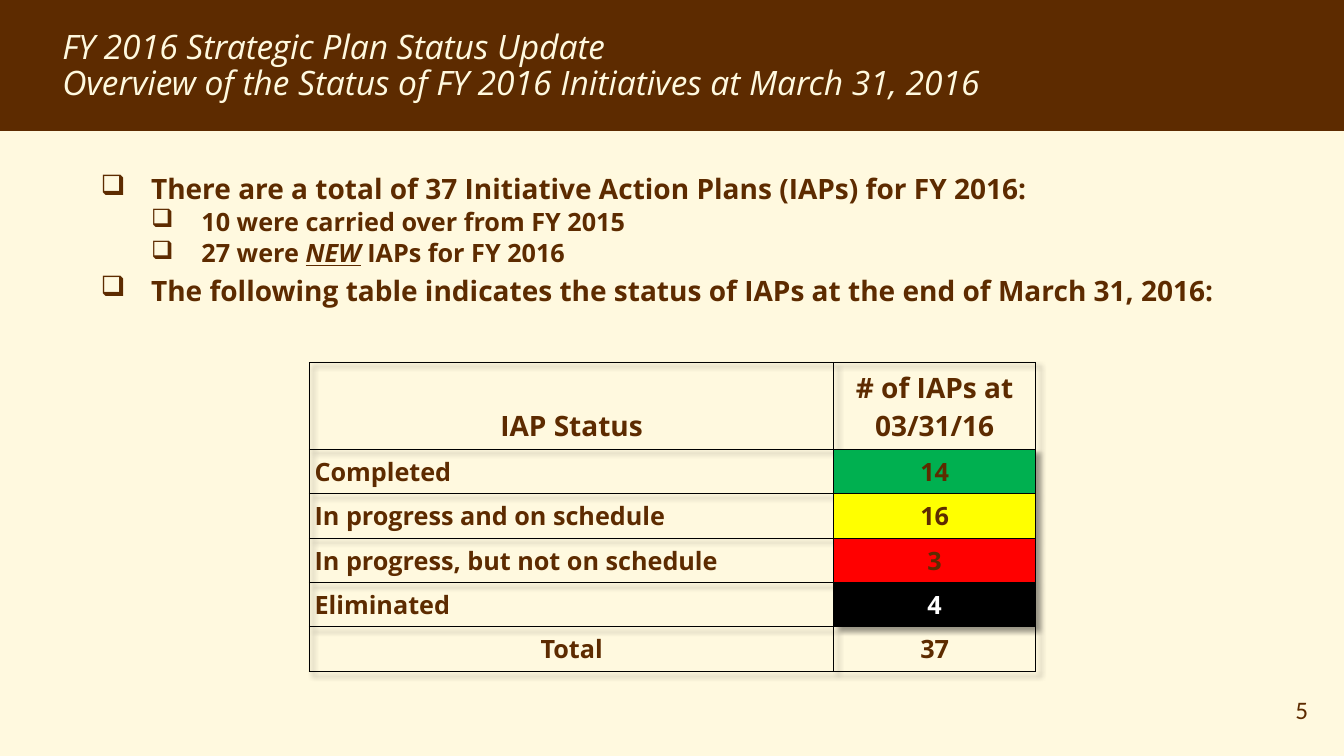
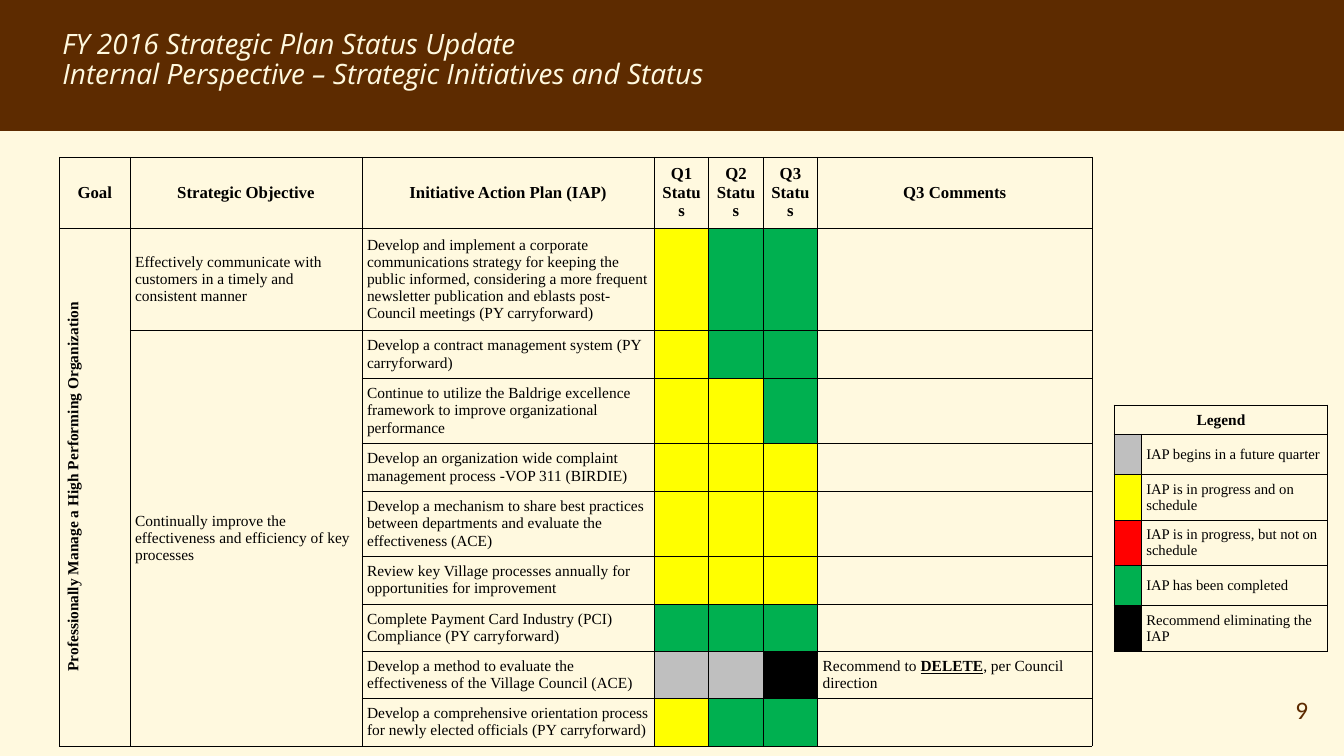
from lxml import etree
from pptx import Presentation, util as u
from pptx.dml import color
from pptx.enum import shapes, text
from pptx.oxml import ns

BROWN, CREAM, INK, WHITE = "5D2B00", "FFF9DF", "000000", "FFFFFF"
GREEN, YELLOW, RED, GREY = "00B050", "FFFF00", "FF0000", "BFBFBF"
STATUS = {"G": GREEN, "Y": YELLOW, "R": RED, "N": GREY, "B": INK}
SANS = {"name": "Open Sans", "color": BROWN}
SERIF = {"name": "Times New Roman", "color": INK, "size": 11}
LEFT, CENTER = text.PP_ALIGN.LEFT, text.PP_ALIGN.CENTER
MIDDLE, BOTTOM = text.MSO_ANCHOR.MIDDLE, text.MSO_ANCHOR.BOTTOM
COLUMNS, ROWS = 133.3, 75


def rgb(value):
    return color.RGBColor.from_string(value)


def grid(count):
    """Length of a number of grid columns or rows, ten to the inch."""
    return u.Inches(count / 10)


def add_xml(parent, tag, **attributes):
    return etree.SubElement(parent, ns.qn(tag), attributes)


def set_font(font, style):
    for key, value in style.items():
        if key == "color":
            font.color.rgb = rgb(value)
        else:
            setattr(font, key, u.Pt(value) if key == "size" else value)


def write(para, parts, style):
    """Fill a paragraph from a string, or from (string, extra style) pairs."""
    for words, extra in [(parts, {})] if isinstance(parts, str) else parts:
        span = para.add_run()
        span.text = words
        set_font(span.font, {**style, **extra})


def add_borders(cell, points):
    properties = cell._tc.get_or_add_tcPr()
    for side in ("a:lnL", "a:lnR", "a:lnT", "a:lnB"):
        line = add_xml(properties, side, w=str(u.Pt(points)))
        add_xml(add_xml(line, "a:solidFill"), "a:srgbClr", val=INK)


def add_shadow(table):
    effects = etree.Element(ns.qn("a:effectLst"))
    shadow = add_xml(effects, "a:outerShdw", blurRad="50800", dist="50800",
                     dir="2700000", algn="tl", rotWithShape="0")
    add_xml(add_xml(shadow, "a:srgbClr", val=INK), "a:alpha", val="40000")
    table._tbl.tblPr.insert(0, effects)


def label(words, **options):
    return {"text": words, **options}


def swatch(key):
    return {"fill": STATUS[key]}


class Report:
    def __init__(self):
        self.deck = Presentation()
        self.deck.slide_width, self.deck.slide_height = grid(COLUMNS), grid(ROWS)
        fill = self.deck.slide_master.background.fill
        fill.solid()
        fill.fore_color.rgb = rgb(CREAM)
        self.page = None

    def add_page(self, lines, size, number):
        """Start a slide with its band, title lines and page number."""
        self.page = self.deck.slides.add_slide(self.deck.slide_layouts[6])
        band = self.page.shapes.add_shape(
            shapes.MSO_SHAPE.RECTANGLE, 0, 0, grid(COLUMNS), grid(13))
        band.shadow.inherit = False
        band.fill.solid()
        band.fill.fore_color.rgb = rgb(BROWN)
        band.line.fill.background()
        style = {**SANS, "color": CREAM, "italic": True, "size": size}
        for para, line in self.add_text((5.2, 2.5, 122, 9), lines):
            para.line_spacing = 0.9
            write(para, line, style)
        for para, line in self.add_text((127.5, 68.4, 3, 4), [number]):
            write(para, line, {"name": "Calibri", "color": BROWN, "size": 18})

    def add_text(self, at, lines):
        """Add a text box and pair each of its paragraphs with a line."""
        frame = self.page.shapes.add_textbox(*map(grid, at)).text_frame
        frame.word_wrap = True
        paras = [frame.paragraphs[0]] + [frame.add_paragraph() for _ in lines[1:]]
        return list(zip(paras, lines))

    def add_bullets(self, at, items):
        """Add (level, parts) items as a list with box bullets."""
        for index, (para, (level, parts)) in enumerate(self.add_text(at, items)):
            properties = para._p.get_or_add_pPr()
            properties.set("marL", str(grid(5 + 5 * level)))
            properties.set("indent", str(grid(-5)))
            add_xml(properties, "a:buChar", char="❑")
            para.level = level
            para.line_spacing = 0.9
            para.space_before = u.Pt((3 if level else 6) if index else 0)
            write(para, parts, {**SANS, "bold": True, "size": 18 if level else 20})

    def add_table(self, at, widths, heights, rows, style, border, merges=()):
        table = self.page.shapes.add_table(
            len(heights), len(widths), *map(grid, at),
            grid(sum(widths)), grid(sum(heights))).table
        table.first_row = table.horz_banding = False
        for column, width in zip(table.columns, widths):
            column.width = grid(width)
        for row, height in zip(table.rows, heights):
            row.height = grid(height)
        for row, line in zip(table.rows, rows):
            for cell, content in zip(row.cells, line):
                self.fill_cell(cell, content, style, border)
        for top, left, bottom, right in merges:
            table.cell(top, left).merge(table.cell(bottom, right))
        return table

    def fill_cell(self, cell, content, style, border):
        for side in ("left", "right", "top", "bottom"):
            setattr(cell, f"margin_{side}", grid(0.5))
        cell.vertical_anchor = content.get("anchor", MIDDLE)
        add_borders(cell, border)
        if "fill" in content:
            cell.fill.solid()
            cell.fill.fore_color.rgb = rgb(content["fill"])
        else:
            cell.fill.background()
        if "vert" in content:
            cell._tc.get_or_add_tcPr().set("vert", content["vert"])
        if "text" in content:
            para = cell.text_frame.paragraphs[0]
            para.alignment = content.get("align", LEFT)
            write(para, content["text"], {**style, **content.get("font", {})})


def build_overview(report):
    report.add_page(["FY 2016 Strategic Plan Status Update",
                     "Overview of the Status of FY 2016 Initiatives at March 31, 2016"],
                    24, "5")
    report.add_bullets((9, 16.9, 115, 17), [
        (0, "There are a total of 37 Initiative Action Plans (IAPs) for FY 2016:"),
        (1, "10 were carried over from FY 2015"),
        (1, [("27 were ", {}), ("NEW", {"italic": True, "underline": True}),
             (" IAPs for FY 2016", {})]),
        (0, "The following table indicates the status of IAPs"
            " at the end of March 31, 2016:")])
    header = {"align": CENTER, "anchor": BOTTOM, "font": {"size": 20}}
    counts = [("Completed", "14", "G"), ("In progress and on schedule", "16", "Y"),
              ("In progress, but not on schedule", "3", "R"), ("Eliminated", "4", "B")]
    rows = [[label("IAP Status", **header), label("# of IAPs at 03/31/16", **header)]]
    for status, count, key in counts:
        font = {"color": WHITE} if key == "B" else {}
        rows.append([label(status),
                     label(count, align=CENTER, font=font, **swatch(key))])
    rows.append([label("Total", align=CENTER), label("37", align=CENTER)])
    table = report.add_table((30.7, 36), [52, 20], [8.6] + [4.4] * 5, rows,
                             {**SANS, "bold": True, "size": 18}, 1)
    add_shadow(table)


def build_initiatives(report):
    report.add_page(["FY 2016 Strategic Plan Status Update",
                     "Internal Perspective – Strategic Initiatives and Status"], 20, "9")
    bold = {"bold": True}
    headings = ["Goal", "Strategic Objective", "Initiative Action Plan (IAP)",
                "Q1 Status", "Q2 Status", "Q3 Status", "Q3 Comments"]
    plans = [
        ("Develop and implement a corporate communications strategy for keeping the "
         "public informed, considering a more frequent newsletter publication and "
         "eblasts post-Council meetings (PY carryforward)", "YGG", 10.2),
        ("Develop a contract management system (PY carryforward)", "YGG", 4.7),
        ("Continue to utilize the Baldrige excellence framework to improve "
         "organizational performance", "YYG", 6.5),
        ("Develop an organization wide complaint management process "
         "-VOP 311 (BIRDIE)", "YYY", 4.7),
        ("Develop a mechanism to share best practices between departments and "
         "evaluate the effectiveness (ACE)", "YYY", 6.5),
        ("Review key Village processes annually for opportunities for improvement",
         "YYY", 4.7),
        ("Complete Payment Card Industry (PCI) Compliance (PY carryforward)",
         "GGG", 4.7),
        ("Develop a method to evaluate the effectiveness of the Village Council (ACE)",
         "NNB", 4.7),
        ("Develop a comprehensive orientation process for newly elected officials "
         "(PY carryforward)", "YGG", 4.7)]
    rows = [[label(words, align=CENTER, font={**bold, "size": 12})
             for words in headings]]
    rows += [[{}, {}, label(plan), *map(swatch, quarters), {}]
             for plan, quarters, _ in plans]
    rows[1][0] = label("Professionally Manage a High Performing Organization",
                       align=CENTER, vert="vert270", font=bold)
    rows[1][1] = label("Effectively communicate with customers in a timely and "
                       "consistent manner")
    rows[2][1] = label("Continually improve the effectiveness and efficiency of "
                       "key processes")
    rows[8][6] = label([("Recommend to ", {}), ("DELETE", {**bold, "underline": True}),
                        (", per Council direction", {})])
    report.add_table((5.9, 15.6), [7, 23, 29, 5.4, 5.4, 5.4, 27.2],
                     [7] + [height for *_, height in plans], rows, SERIF, 0.5,
                     [(1, 0, 9, 0), (2, 1, 9, 1)])
    meanings = [("N", "IAP begins in a future quarter"),
                ("Y", "IAP is in progress and on schedule"),
                ("R", "IAP is in progress, but not on schedule"),
                ("G", "IAP has been completed"), ("B", "Recommend eliminating the IAP")]
    legend = [[label("Legend", align=CENTER, font={**bold, "size": 11}), {}]]
    legend += [[swatch(key), label(meaning)] for key, meaning in meanings]
    report.add_table((110.5, 40.2), [2.7, 18.5], [2.9, 4, 4.5, 4.5, 4, 4.5], legend,
                     {**SERIF, "size": 10.5}, 1, [(0, 0, 0, 1)])


def main():
    report = Report()
    build_overview(report)
    build_initiatives(report)
    report.deck.save("out.pptx")


if __name__ == "__main__":
    main()
